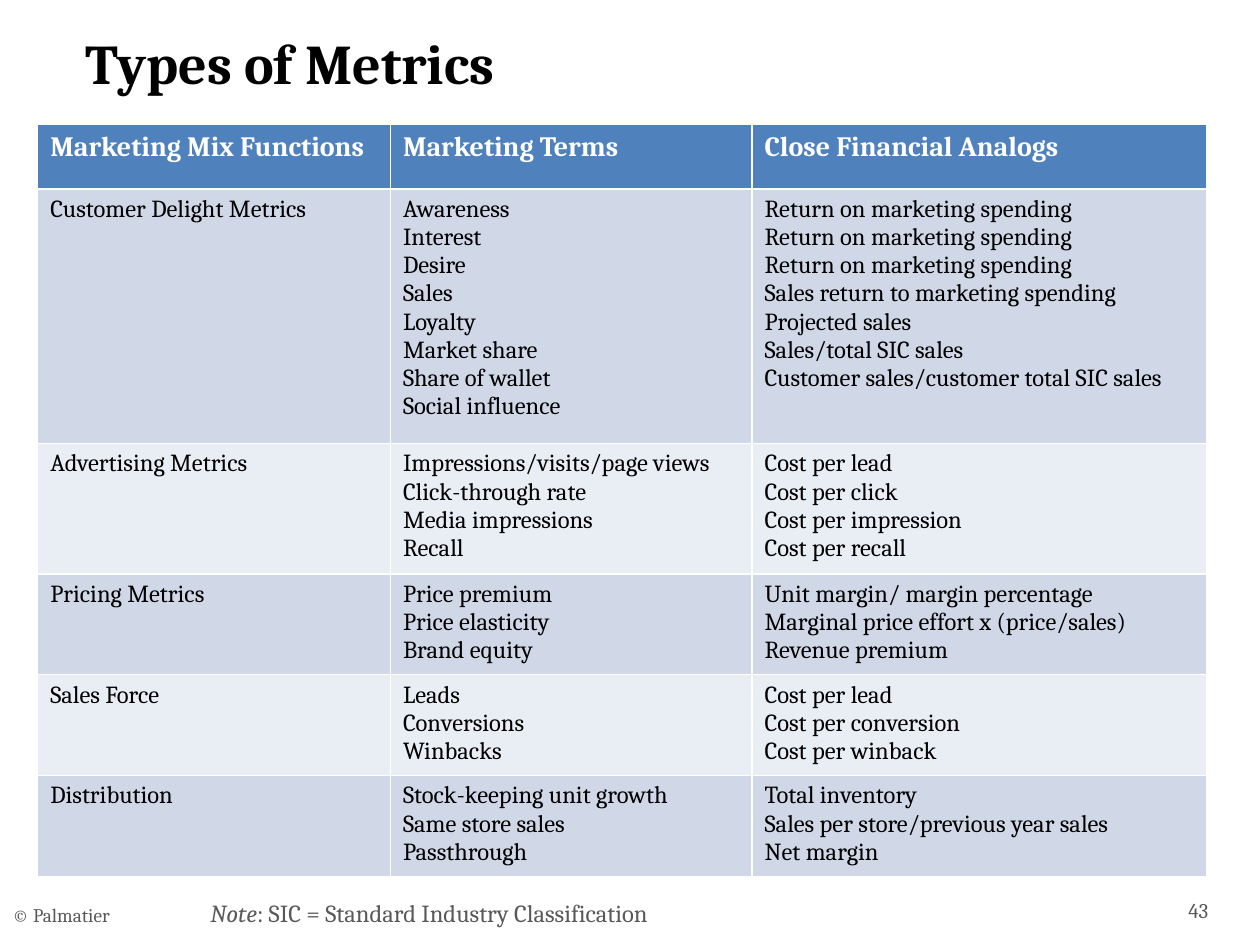
from pptx import Presentation
from pptx.dml.color import RGBColor
from pptx.enum.text import MSO_ANCHOR as Anchor, PP_ALIGN as Align
from pptx.util import Cm, Pt

FONT = "Cambria"
BLACK = RGBColor(0x00, 0x00, 0x00)
WHITE = RGBColor(0xFF, 0xFF, 0xFF)
GREY = RGBColor(0x59, 0x59, 0x59)
HEADER_BLUE = RGBColor(0x4F, 0x81, 0xBD)
BANDS = (RGBColor(0xE9, 0xED, 0xF4), RGBColor(0xD0, 0xD8, 0xE8))

COLUMN_WIDTHS = (7.11, 7.29, 9.17)
ROW_HEIGHTS = (1.3, 5.13, 2.46, 1.9, 1.9, 1.9)
HEADINGS = ("Marketing Mix Functions", "Marketing Terms", "Close Financial Analogs")
METRICS = (
    ("Customer Delight Metrics",
     ("Awareness", "Interest", "Desire", "Sales", "Loyalty", "Market share",
      "Share of wallet", "Social influence"),
     ("Return on marketing spending",) * 3
     + ("Sales return to marketing spending", "Projected sales",
        "Sales/total SIC sales", "Customer sales/customer total SIC sales")),
    ("Advertising Metrics",
     ("Impressions/visits/page views", "Click-through rate", "Media impressions",
      "Recall"),
     ("Cost per lead", "Cost per click", "Cost per impression", "Cost per recall")),
    ("Pricing Metrics",
     ("Price premium", "Price elasticity", "Brand equity"),
     ("Unit margin/ margin percentage", "Marginal price effort x (price/sales)",
      "Revenue premium")),
    ("Sales Force",
     ("Leads", "Conversions", "Winbacks"),
     ("Cost per lead", "Cost per conversion", "Cost per winback")),
    ("Distribution",
     ("Stock-keeping unit growth", "Same store sales", "Passthrough"),
     ("Total inventory", "Sales per store/previous year sales", "Net margin")),
)


def add_run(paragraph, text, size, color, bold=False, italic=False):
    run = paragraph.add_run()
    run.text = text
    font = run.font
    font.name, font.size = FONT, Pt(size)
    font.bold, font.italic = bold, italic
    font.color.rgb = color


def set_title(slide, text):
    title = slide.shapes.title
    title.left, title.top, title.width, title.height = Cm(1.47), Cm(0.2), Cm(22.86), Cm(2.11)
    title.text_frame.vertical_anchor = Anchor.MIDDLE
    heading = title.text_frame.paragraphs[0]
    heading.alignment = Align.LEFT
    add_run(heading, text, 32, BLACK, bold=True)


def add_footer(slide, left, top, width, size, parts, align=Align.LEFT):
    box = slide.shapes.add_textbox(Cm(left), Cm(top), Cm(width), Cm(1.02))
    frame = box.text_frame
    frame.word_wrap = True
    frame.vertical_anchor = Anchor.MIDDLE
    frame.paragraphs[0].alignment = align
    for text, italic in parts:
        add_run(frame.paragraphs[0], text, size, GREY, italic=italic)


def fill_cell(cell, lines, fill, size, color, bold=False):
    cell.fill.solid()
    cell.fill.fore_color.rgb = fill
    frame = cell.text_frame
    for index, line in enumerate(lines):
        paragraph = frame.add_paragraph() if index else frame.paragraphs[0]
        add_run(paragraph, line, size, color, bold)


def add_metrics_table(slide):
    table = slide.shapes.add_table(
        len(ROW_HEIGHTS), len(COLUMN_WIDTHS), Cm(0.76), Cm(2.51),
        Cm(sum(COLUMN_WIDTHS)), Cm(sum(ROW_HEIGHTS))).table
    for column, width in zip(table.columns, COLUMN_WIDTHS):
        column.width = Cm(width)
    for row, height in zip(table.rows, ROW_HEIGHTS):
        row.height = Cm(height)
    for col, heading in enumerate(HEADINGS):
        fill_cell(table.cell(0, col), [heading], HEADER_BLUE, 16, WHITE, bold=True)
    for row, (function, terms, analogs) in enumerate(METRICS, start=1):
        for col, lines in enumerate(([function], terms, analogs)):
            fill_cell(table.cell(row, col), lines, BANDS[row % 2], 14, BLACK)


def main():
    deck = Presentation()
    deck.slide_width, deck.slide_height = Cm(25.4), Cm(19.05)
    slide = deck.slides.add_slide(deck.slide_layouts[5])
    set_title(slide, "Types of Metrics")
    add_footer(slide, 0, 17.93, 17.02, 11, [("© Palmatier", False)])
    add_footer(slide, 23.06, 17.83, 1.55, 12, [("43", False)], Align.RIGHT)
    add_metrics_table(slide)
    add_footer(slide, 3.99, 17.88, 17.02, 14,
               [("Note", True), (": SIC = Standard Industry Classification", False)])
    deck.save("out.pptx")


if __name__ == "__main__":
    main()
